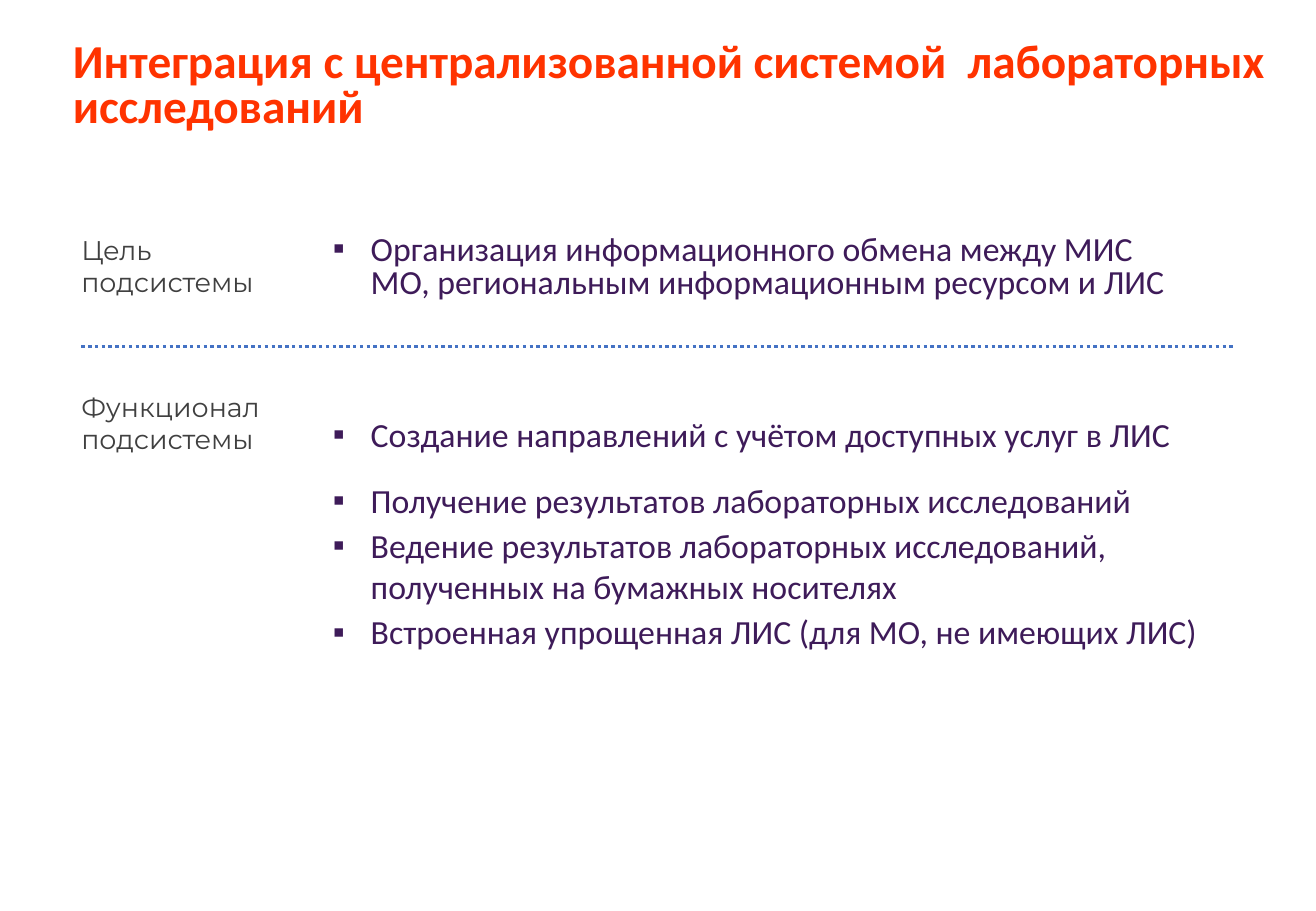
from dataclasses import dataclass
from typing import Any

from lxml import etree
from pptx import Presentation
from pptx.dml.color import RGBColor
from pptx.enum.dml import MSO_LINE
from pptx.enum.shapes import MSO_CONNECTOR
from pptx.enum.text import MSO_ANCHOR, MSO_AUTO_SIZE, PP_ALIGN
from pptx.oxml.ns import qn
from pptx.slide import Slide
from pptx.text.text import TextFrame, _Paragraph
from pptx.util import Cm, Pt

LEFT = PP_ALIGN.LEFT
TOP, BOTTOM = MSO_ANCHOR.TOP, MSO_ANCHOR.BOTTOM
FIXED = MSO_AUTO_SIZE.NONE
DOTS = MSO_LINE.ROUND_DOT
STRAIGHT = MSO_CONNECTOR.STRAIGHT


@dataclass(frozen=True)
class Style:
    face: str
    size: int
    color: str
    bold: bool = False


@dataclass(frozen=True)
class Theme:
    title: Style = Style("Calibri", 28, "FF3300", True)
    label: Style = Style("Montserrat", 16, "404040")
    body: Style = Style("Calibri", 20, "3E1B59")
    paper: str = "FFFFFF"
    rule: str = "4472C4"
    rule_width: int = 2


@dataclass(frozen=True)
class Para:
    text: str
    lines: float = 1.0
    before: int = 0
    margin: float = 0
    hang: float = 0
    bullet: str = ""


@dataclass(frozen=True)
class Block:
    box: tuple[float, float, float, float]
    style: Style
    paras: list[Para]
    inset: float = 0


THEME = Theme()
WIDTH, HEIGHT = 27.51, 19.05
EDGE, RULE_END, RULE_TOP = 1.7, 25.81, 7.24
BODY_LEFT = 6.96
TITLE = "Интеграция с централизованной системой  лабораторных исследований"


def item(text: str, lines: float, before: int) -> Para:
    return Para(text, lines, before, 0.79, -0.79, "▪")


def label(top: float, *words: str) -> Block:
    box = (EDGE, top, 4.52, 1.63)
    return Block(box, THEME.label, [Para(word) for word in words], 0.13)


BLOCKS = [
    label(4.75, "Цель", "подсистемы"),
    Block((BODY_LEFT, 4.93, 18.11, 1.32), THEME.body, [
        item("Организация информационного обмена между МИС МО, "
             "региональным информационным ресурсом и ЛИС", 0.8, 6),
    ]),
    label(8.03, "Функционал", "подсистемы"),
    Block((BODY_LEFT, 8.23, 18.87, 7.14), THEME.body, [
        item("Создание направлений с учётом доступных услуг в ЛИС", 1.5, 3),
        item("Получение результатов лабораторных исследований", 1.5, 3),
        item("Ведение результатов лабораторных исследований, "
             "полученных на бумажных носителях", 1.0, 3),
        item("Встроенная упрощенная ЛИС (для МО, не имеющих ЛИС)", 1.0, 3),
    ]),
]


def apply(target: Any, values: dict[str, Any]) -> None:
    for name, value in values.items():
        setattr(target, name, value)


def indent(para: _Paragraph, data: Para) -> None:
    """Set the margin, hanging indent and bullet."""
    props = para._p.get_or_add_pPr()
    props.set("marL", str(Cm(data.margin)))
    props.set("indent", str(Cm(data.hang)))
    if data.bullet:
        etree.SubElement(props, qn("a:buFont"), typeface="Arial")
        etree.SubElement(props, qn("a:buChar"), char=data.bullet)


def write(frame: TextFrame, paras: list[Para], style: Style) -> None:
    for pos, data in enumerate(paras):
        para = frame.add_paragraph() if pos else frame.paragraphs[0]
        apply(para, {"alignment": LEFT, "line_spacing": data.lines,
                     "space_before": Pt(data.before)})
        indent(para, data)
        run = para.add_run()
        run.text = data.text
        apply(run.font, {"name": style.face, "size": Pt(style.size),
                         "bold": style.bold})
        run.font.color.rgb = RGBColor.from_string(style.color)


def add_title(slide: Slide) -> None:
    title = slide.shapes.title
    apply(title, {"left": Cm(0), "top": Cm(0),
                  "width": Cm(WIDTH), "height": Cm(2.9)})
    title.fill.solid()
    title.fill.fore_color.rgb = RGBColor.from_string(THEME.paper)
    apply(title.text_frame, {"vertical_anchor": BOTTOM, "auto_size": FIXED,
                             "word_wrap": True})
    write(title.text_frame, [Para(TITLE, 0.8, margin=1.27)], THEME.title)


def add_block(slide: Slide, block: Block) -> None:
    frame = slide.shapes.add_textbox(*map(Cm, block.box)).text_frame
    apply(frame, {"word_wrap": True, "vertical_anchor": TOP,
                  "auto_size": FIXED, "margin_left": 0, "margin_right": 0,
                  "margin_top": Cm(block.inset),
                  "margin_bottom": Cm(block.inset)})
    write(frame, block.paras, block.style)


def add_rule(slide: Slide) -> None:
    rule = slide.shapes.add_connector(
        STRAIGHT, Cm(EDGE), Cm(RULE_TOP), Cm(RULE_END), Cm(RULE_TOP))
    apply(rule.line, {"width": Pt(THEME.rule_width), "dash_style": DOTS})
    rule.line.color.rgb = RGBColor.from_string(THEME.rule)
    etree.SubElement(rule._element.spPr, qn("a:effectLst"))


def main() -> None:
    deck = Presentation()
    apply(deck, {"slide_width": Cm(WIDTH), "slide_height": Cm(HEIGHT)})
    slide = deck.slides.add_slide(deck.slide_layouts.get_by_name("Title Only"))
    add_title(slide)
    for block in BLOCKS:
        add_block(slide, block)
    add_rule(slide)
    deck.save("out.pptx")


if __name__ == "__main__":
    main()
